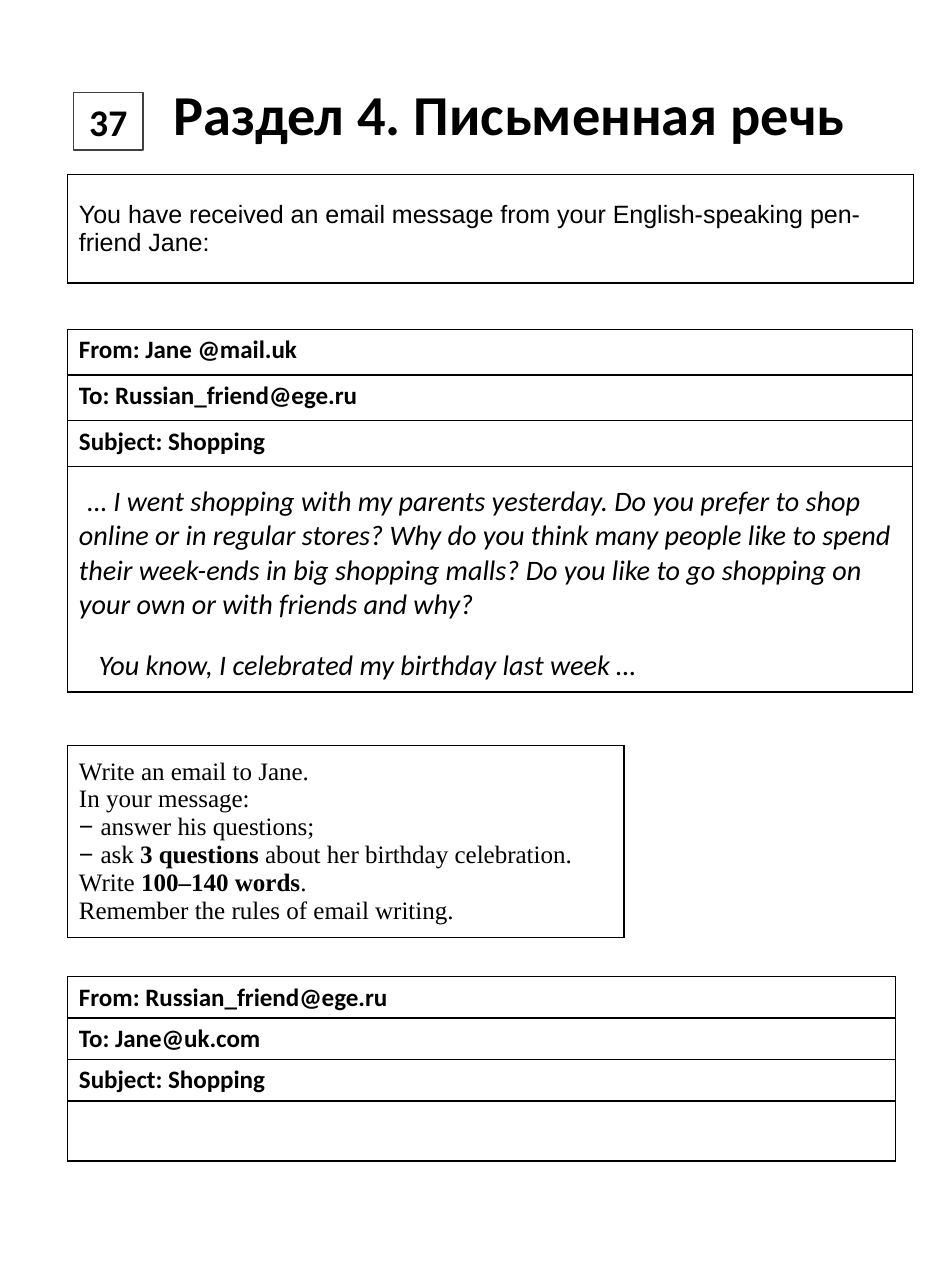
from lxml import etree
from pptx import Presentation
from pptx.dml.color import RGBColor
from pptx.enum.shapes import MSO_SHAPE
from pptx.enum.text import MSO_ANCHOR, MSO_AUTO_SIZE, PP_ALIGN
from pptx.oxml.ns import qn
from pptx.util import Pt

RECTANGLE = MSO_SHAPE.RECTANGLE
TOP, MIDDLE = MSO_ANCHOR.TOP, MSO_ANCHOR.MIDDLE
CENTER = PP_ALIGN.CENTER
FIT_SHAPE = MSO_AUTO_SIZE.SHAPE_TO_FIT_TEXT

BLACK, WHITE, GRAY = "000000", "FFFFFF", "404040"
LEFT = 43.2
BREAK = "\n"


def color(value):
    return RGBColor.from_string(value)


class Worksheet:
    """Holds the style and the current slide."""

    def __init__(self, slide, font="Calibri", size=16):
        self.slide = slide
        self.font = font
        self.size = size

    def add_run(self, paragraph, text, font=None, size=None, bold=False, italic=False):
        run = paragraph.add_run()
        run.text = text
        run.font.name = font or self.font
        run.font.size = Pt(size or self.size)
        run.font.bold = bold
        run.font.italic = italic
        run.font.color.rgb = color(BLACK)

    def add_number(self, text, left, top, width, height):
        shape = self.slide.shapes.add_shape(
            RECTANGLE, Pt(left), Pt(top), Pt(width), Pt(height))
        shape.shadow.inherit = False
        shape.fill.solid()
        shape.fill.fore_color.rgb = color(WHITE)
        shape.line.color.rgb = color(GRAY)
        shape.line.width = Pt(1)
        shape.text_frame.vertical_anchor = MIDDLE
        paragraph = shape.text_frame.paragraphs[0]
        paragraph.alignment = CENTER
        self.add_run(paragraph, text, size=24, bold=True)

    def add_title(self, text, left, top, width, height):
        box = self.slide.shapes.add_textbox(Pt(left), Pt(top), Pt(width), Pt(height))
        box.text_frame.word_wrap = False
        box.text_frame.auto_size = FIT_SHAPE
        paragraph = box.text_frame.paragraphs[0]
        paragraph.alignment = CENTER
        self.add_run(paragraph, text, size=36, bold=True)

    def add_table(self, top, width, heights):
        """Add a one-column table with black borders and return its cells."""
        frame = self.slide.shapes.add_table(
            len(heights), 1, Pt(LEFT), Pt(top), Pt(width), Pt(sum(heights)))
        table = frame.table
        table.first_row = table.horz_banding = False
        table.columns[0].width = Pt(width)
        for row, height in zip(table.rows, heights):
            row.height = Pt(height)
        cells = [row.cells[0] for row in table.rows]
        for cell in cells:
            self.add_borders(cell)
            cell.fill.background()
        return cells

    def add_borders(self, cell):
        properties = cell._tc.get_or_add_tcPr()
        for side in ("a:lnL", "a:lnR", "a:lnT", "a:lnB"):
            line = etree.SubElement(properties, qn(side), w=str(Pt(1)))
            fill = etree.SubElement(line, qn("a:solidFill"))
            etree.SubElement(fill, qn("a:srgbClr"), val=BLACK)

    def fill_cell(self, cell, runs, anchor=MIDDLE):
        cell.vertical_anchor = anchor
        paragraph = cell.text_frame.paragraphs[0]
        for text, style in runs:
            if text == BREAK:
                paragraph.add_line_break()
            else:
                self.add_run(paragraph, text, **style)

    def fill_headers(self, cells, texts):
        for cell, text in zip(cells, texts):
            self.fill_cell(cell, [(text, {"bold": True})], TOP)

    def fill_letter(self, cell, paragraphs):
        cell.vertical_anchor = MIDDLE
        cell.margin_top, cell.margin_bottom = Pt(11), Pt(5)
        frame = cell.text_frame
        for index, (text, indent) in enumerate(paragraphs):
            paragraph = frame.add_paragraph() if index else frame.paragraphs[0]
            paragraph._p.get_or_add_pPr().set("indent", str(Pt(indent)))
            if index:
                paragraph.space_before = Pt(17)
            self.add_run(paragraph, text, size=18, italic=True)


def main():
    presentation = Presentation()
    presentation.slide_width = Pt(595.44)
    presentation.slide_height = Pt(822.24)
    slide = presentation.slides.add_slide(presentation.slide_layouts[6])
    sheet = Worksheet(slide)

    # Task number and heading
    sheet.add_number("37", 46.8, 59, 44.6, 36.7)
    sheet.add_title("Раздел 4. Письменная речь", 101.5, 46.8, 447.1, 51.1)

    # Introduction
    intro, = sheet.add_table(111.6, 540, [69.1])
    sheet.fill_cell(intro, [(
        "You have received an email message from your English-speaking "
        "pen-friend Jane:", {"font": "Arial"})])

    # Email from Jane
    *headers, letter = sheet.add_table(210.2, 539.3, [29.2] * 3 + [144])
    sheet.fill_headers(headers, [
        "From: Jane @mail.uk", "To: Russian_friend@ege.ru", "Subject: Shopping"])
    sheet.fill_letter(letter, [
        ("… I went shopping with my parents yesterday. Do you prefer to shop "
         "online or in regular stores? Why do you think many people like to "
         "spend their week-ends in big shopping malls? Do you like to go "
         "shopping on your own or with friends and why?", 5.5),
        ("You know, I celebrated my birthday last week …", 12.5)])

    # Instructions
    plain = {"font": "Times New Roman"}
    strong = {**plain, "bold": True}
    dash = ("− ", {"font": "Arial"})
    line_break = (BREAK, {})
    task, = sheet.add_table(475.9, 355, [122])
    sheet.fill_cell(task, [
        ("Write an email to Jane.", plain), line_break,
        ("In your message:", plain), line_break,
        dash, ("answer his questions;", plain), line_break,
        dash, ("ask ", plain), ("3 questions ", strong),
        ("about her birthday celebration.", plain), line_break,
        ("Write ", plain), ("100–140 words", strong), (".", plain), line_break,
        ("Remember the rules of email writing.", plain)])

    # Reply form
    *headers, _ = sheet.add_table(623.5, 528.5, [26.4] * 3 + [38.5])
    sheet.fill_headers(headers, [
        "From: Russian_friend@ege.ru", "To: Jane@uk.com", "Subject: Shopping"])

    presentation.save("out.pptx")


if __name__ == "__main__":
    main()
